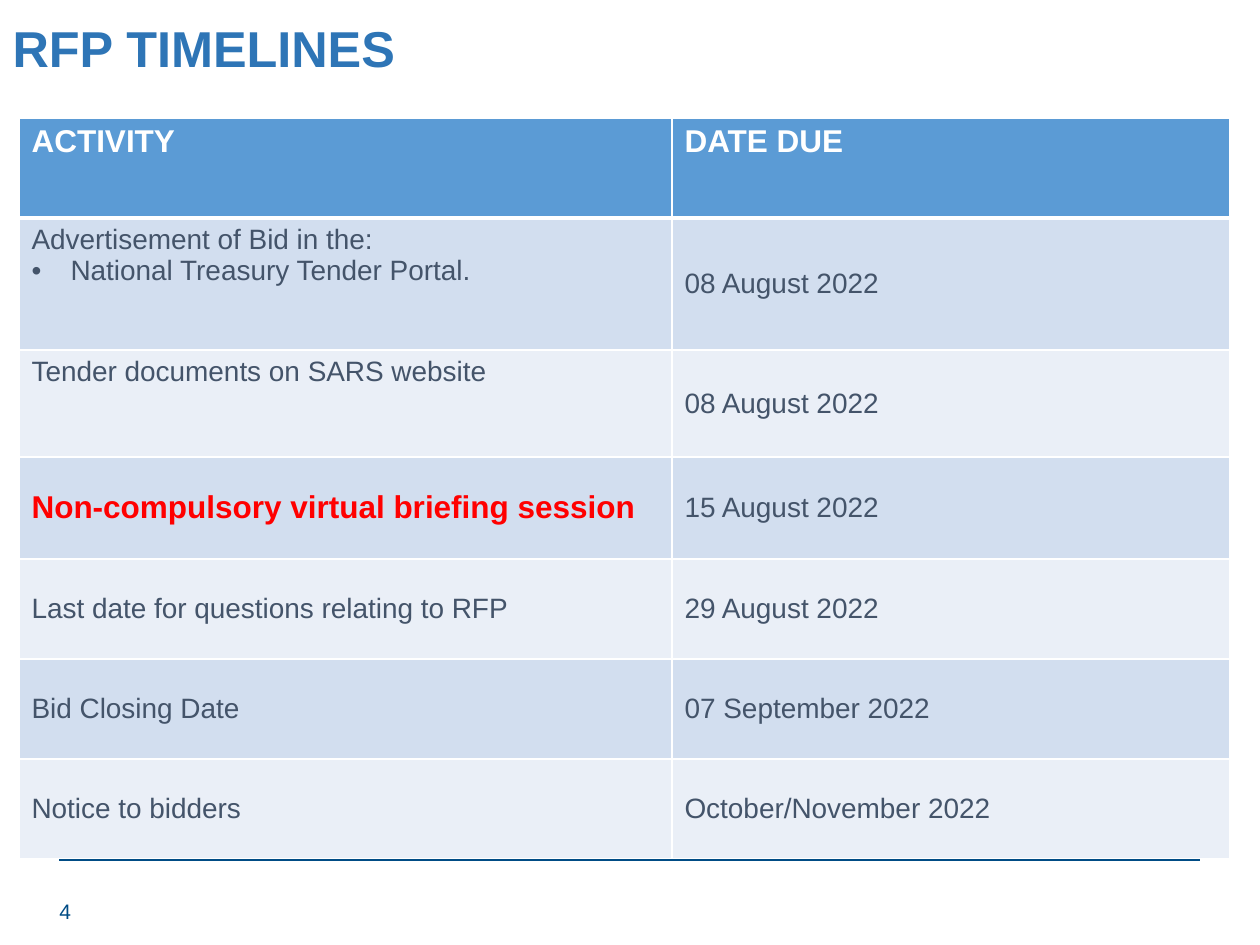
"""Build the RFP timelines slide: a title, a schedule table, a rule and a page number."""
from lxml.etree import SubElement
from pptx import Presentation
from pptx.dml.color import RGBColor
from pptx.enum.shapes import MSO_CONNECTOR
from pptx.enum.text import MSO_ANCHOR, PP_ALIGN
from pptx.oxml.ns import qn
from pptx.util import Pt

SCALE = 914400 / 126
COLORS = {
    "title": "2E75B6", "rule": "004C85", "header": "5B9BD5", "white": "FFFFFF",
    "dark_band": "D2DEEF", "light_band": "EAEFF7", "body": "44546A", "alert": "FF0000",
}
TITLE = "RFP TIMELINES"
PAGE_NUMBER = "4"
BULLET = "•"
HEADER = ("ACTIVITY", "DATE DUE")
SCHEDULE = [
    (["Advertisement of Bid in the:", BULLET + "National Treasury Tender Portal."], "08 August 2022"),
    (["Tender documents on SARS website"], "08 August 2022"),
    (["Non-compulsory virtual briefing session"], "15 August 2022"),
    (["Last date for questions relating to RFP"], "29 August 2022"),
    (["Bid Closing Date"], "07 September 2022"),
    (["Notice to bidders"], "October/November 2022"),
]
ALERT_ROW = 3
TOP_ROWS = (1, 2)
COLUMN_WIDTHS = [653, 558]
ROW_HEIGHTS = [100, 132, 107, 102, 100, 100, 100]
BULLET_INDENT = 39


def px(length):
    return round(length * SCALE)


def color(name):
    return RGBColor.from_string(COLORS[name])


def write(frame, lines, size=16, tint="body", bold=False, spacing=None):
    frame.word_wrap = True
    for index, line in enumerate(lines):
        para = frame.paragraphs[0] if index == 0 else frame.add_paragraph()
        para.alignment = PP_ALIGN.LEFT
        if spacing:
            para.line_spacing = spacing
        if line.startswith(BULLET):
            properties = para._p.get_or_add_pPr()
            properties.set("marL", str(px(BULLET_INDENT)))
            properties.set("indent", str(-px(BULLET_INDENT)))
            SubElement(properties, qn("a:buFont"), typeface="Arial")
            SubElement(properties, qn("a:buChar"), char=BULLET)
        span = para.add_run()
        span.text = line.removeprefix(BULLET)
        span.font.name = "Arial"
        span.font.size = Pt(size)
        span.font.bold = bold
        span.font.color.rgb = color(tint)


def format_cell(cell, fill, top, bottom):
    properties = cell._tc.get_or_add_tcPr()
    for side, width in (("L", 1), ("R", 1), ("T", top), ("B", bottom)):
        border = SubElement(properties, qn(f"a:ln{side}"), w=str(Pt(width)))
        solid = SubElement(border, qn("a:solidFill"))
        SubElement(solid, qn("a:srgbClr"), val=COLORS["white"])
    cell.fill.solid()
    cell.fill.fore_color.rgb = color(fill)


def add_rule(page):
    rule = page.shapes.add_connector(MSO_CONNECTOR.STRAIGHT, px(59), px(859), px(1200), px(859))
    rule.line.color.rgb = color("rule")
    rule.line.width = Pt(2)
    SubElement(rule._element.spPr, qn("a:effectLst"))


def add_title(page):
    title = page.shapes.title
    title.left, title.top, title.width, title.height = px(0), px(15), px(1086), px(73)
    title.text_frame.vertical_anchor = MSO_ANCHOR.MIDDLE
    write(title.text_frame, [TITLE], size=28.8, tint="title", bold=True, spacing=0.9)


def add_page_number(page):
    box = page.shapes.add_textbox(px(47), px(886), px(284), px(50))
    box.text_frame.vertical_anchor = MSO_ANCHOR.MIDDLE
    write(box.text_frame, [PAGE_NUMBER], size=12, tint="rule")


def add_schedule(page):
    table = page.shapes.add_table(
        len(ROW_HEIGHTS), len(COLUMN_WIDTHS), px(19), px(118),
        px(sum(COLUMN_WIDTHS)), px(sum(ROW_HEIGHTS)),
    ).table
    for column, width in zip(table.columns, COLUMN_WIDTHS):
        column.width = px(width)
    for row, height in zip(table.rows, ROW_HEIGHTS):
        row.height = px(height)
    for column, text in enumerate(HEADER):
        cell = table.cell(0, column)
        format_cell(cell, "header", top=1, bottom=3)
        write(cell.text_frame, [text], size=18, tint="white", bold=True)
    for row, (activity, date) in enumerate(SCHEDULE, start=1):
        for column, lines in enumerate((activity, [date])):
            cell = table.cell(row, column)
            format_cell(cell, "dark_band" if row % 2 else "light_band", top=3 if row == 1 else 1, bottom=1)
            at_top = column == 0 and row in TOP_ROWS
            cell.vertical_anchor = MSO_ANCHOR.TOP if at_top else MSO_ANCHOR.MIDDLE
            if column == 0 and row == ALERT_ROW:
                write(cell.text_frame, lines, size=18, tint="alert", bold=True)
            else:
                write(cell.text_frame, lines)


def main():
    deck = Presentation()
    deck.slide_width, deck.slide_height = px(1260), px(945)
    page = deck.slides.add_slide(deck.slide_layouts[5])
    add_rule(page)
    add_title(page)
    add_page_number(page)
    add_schedule(page)
    deck.save("out.pptx")


if __name__ == "__main__":
    main()
